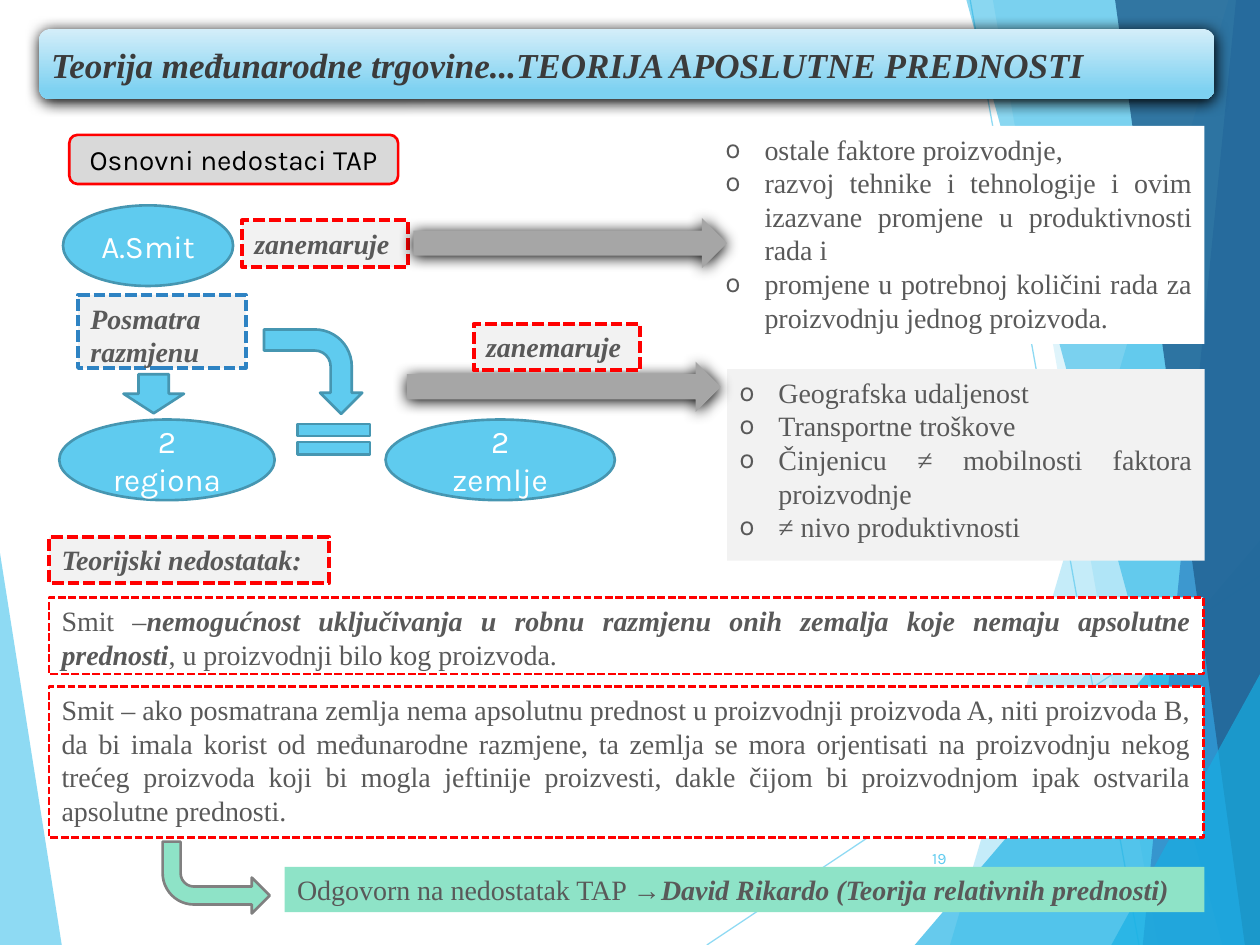
"""Builds the slide on the shortcomings of the theory of absolute advantage."""
from lxml import etree
from pptx import Presentation
from pptx.dml.color import RGBColor
from pptx.enum import dml, shapes, text
from pptx.oxml import ns
from pptx.util import Inches, Pt

G, A = shapes.MSO_SHAPE, text.PP_ALIGN
SERIF, SANS = "Times New Roman", "Karla"
GREY, PALE, RED, SKY, TEAL = "595959", "F2F2F2", "FF0000", "5FCBEF", "4696B1"
MINT, SILVER, WHITE = "8EE3C7", "A6A6A6", "FFFFFF"
LEFT, WIDE, RIGHT = 0.39, 9.16, 9.56

FACETS = [
    ([(0, 4.39), (0.49, 7.5), (0, 7.5)], SKY, 70),
    ([(9.75, 0), (7.54, 7.5), (10, 7.5), (10, 0)], SKY, 36),
    ([(7.88, 0), (9.19, 7.5), (10, 7.5), (10, 0)], SKY, 20),
    ([(7.26, 7.5), (10, 4.29), (10, 7.5)], "17B0E4", 66),
    ([(7.67, 0), (9.7, 7.5), (10, 7.5), (10, 0)], "17B0E4", 50),
    ([(9.81, 0), (9.07, 7.5), (10, 7.5), (10, 0)], "2E83C3", 70),
    ([(8.85, 0), (9.88, 7.5), (10, 7.5), (10, 0)], "226292", 82),
    ([(8.82, 7.5), (10, 5.35), (10, 7.5)], "17B0E4", 66),
]
RAYS = [(5.61, 7.5, 10, 4.57), (7.7, 0, 9.04, 7.5)]

TITLE = "Teorija međunarodne trgovine...TEORIJA APOSLUTNE PREDNOSTI"
IGNORED = [
    "ostale faktore proizvodnje,",
    "razvoj tehnike i tehnologije i ovim izazvane promjene u produktivnosti rada i",
    "promjene u potrebnoj količini rada za proizvodnju jednog proizvoda.",
]
COUNTRIES = [
    "Geografska udaljenost",
    "Transportne troškove",
    "Činjenicu ≠ mobilnosti faktora proizvodnje",
    "≠ nivo produktivnosti",
]
THIRD_PRODUCT = (
    "Smit – ako posmatrana zemlja nema apsolutnu prednost u proizvodnji proizvoda A, "
    "niti proizvoda B, da bi imala korist od međunarodne razmjene, ta zemlja se mora "
    "orjentisati na proizvodnju nekog trećeg proizvoda koji bi mogla jeftinije proizvesti, "
    "dakle čijom bi proizvodnjom ipak ostvarila apsolutne prednosti.")
EXCLUSION = [
    ("Smit –", False),
    ("nemogućnost uključivanja u robnu razmjenu onih zemalja koje nemaju apsolutne "
     "prednosti", True),
    (", u proizvodnji bilo kog proizvoda.", False),
]
ANSWER = [
    ("Odgovorn na nedostatak TAP →", False),
    ("David Rikardo (Teorija relativnih prednosti)", True),
]

prs = Presentation()
prs.slide_width, prs.slide_height = Inches(10), Inches(7.5)
s = prs.slides.add_slide(prs.slide_layouts[6])


def rgb(color):
    return RGBColor.from_string(color)


def sub(parent, tag, **attrs):
    return etree.SubElement(parent, ns.qn(tag), {k: str(v) for k, v in attrs.items()})


def fade(sp, percent):
    color = next(sp._element.spPr.iter(ns.qn("a:srgbClr")))
    sub(color, "a:alpha", val=percent * 1000)


def shape(kind, box, fill, line=None, width=1.5, dash=False, glow=False):
    sp = s.shapes.add_shape(kind, *map(Inches, box))
    sp.shadow.inherit = False
    sp.fill.solid()
    sp.fill.fore_color.rgb = rgb(fill)
    if line:
        sp.line.color.rgb = rgb(line)
        sp.line.width = Pt(width)
        if dash:
            sp.line.dash_style = dml.MSO_LINE.SQUARE_DOT
            sp.line._ln.find(ns.qn("a:prstDash")).set("val", "sysDash")
    else:
        sp.line.fill.background()
    if glow:
        effects = sp._element.spPr.find(ns.qn("a:effectLst"))
        shadow = sub(effects, "a:outerShdw", blurRad=Pt(8.5), dist=Pt(1), dir=5400000,
                     rotWithShape=0)
        sub(shadow, "a:srgbClr", val="000000")
    return sp


def write(sp, paras, size=16, font=SERIF, color=GREY, align=A.JUSTIFY, middle=False,
          bullet=False):
    tf = sp.text_frame
    tf.word_wrap = True
    tf.vertical_anchor = text.MSO_ANCHOR.MIDDLE if middle else text.MSO_ANCHOR.TOP
    for i, runs in enumerate(paras):
        p = tf.paragraphs[0] if i == 0 else tf.add_paragraph()
        p.alignment = align
        if bullet:
            pPr = p._p.get_or_add_pPr()
            pPr.set("marL", str(Inches(0.31)))
            pPr.set("indent", str(-Inches(0.31)))
            sub(pPr, "a:buFont", typeface=SANS)
            sub(pPr, "a:buChar", char="o")
        for words, strong in runs:
            r = p.add_run()
            r.text = words
            r.font.size, r.font.name = Pt(size), font
            r.font.color.rgb = rgb(color)
            r.font.bold = r.font.italic = strong


def label(words, box, line=RED):
    write(shape(G.RECTANGLE, box, PALE, line, 2.25, True), [[(words, True)]])


def oval(lines, box):
    write(shape(G.OVAL, box, SKY, TEAL), [[(t, False)] for t in lines],
          18, SANS, WHITE, A.CENTER, True)


def bullets(items, box, fill):
    write(shape(G.RECTANGLE, box, fill), [[(t, False)] for t in items], bullet=True)


def statement(runs, top, height):
    write(shape(G.RECTANGLE, (LEFT, top, WIDE, height), WHITE, RED, dash=True), [runs])


def facet(points, color, alpha):
    pts = [(Inches(x), Inches(y)) for x, y in points]
    fb = s.shapes.build_freeform(*pts[0])
    fb.add_line_segments(pts[1:], close=True)
    sp = fb.convert_to_shape()
    sp.shadow.inherit = False
    sp.fill.solid()
    sp.fill.fore_color.rgb = rgb(color)
    sp.line.fill.background()
    fade(sp, alpha)


def ray(ends):
    sp = s.shapes.add_connector(shapes.MSO_CONNECTOR.STRAIGHT, *map(Inches, ends))
    sp.line.color.rgb = rgb(SKY)
    sp.line.width = Pt(0.75)
    fade(sp, 70)
    sub(sp._element.spPr, "a:effectLst")


facet(*FACETS[0])
for ends in RAYS:
    ray(ends)
for polygon in FACETS[1:]:
    facet(*polygon)

number = s.shapes.add_textbox(*map(Inches, (7.05, 6.61, 0.56, 0.4)))
write(number, [[("19", False)]], 9, SANS, SKY, A.RIGHT, True)

title = shape(G.ROUNDED_RECTANGLE, (0.31, 0.23, 9.33, 0.56), SKY, glow=True)
title.fill.gradient()
title.fill.gradient_angle = 270
for stop, (color, place) in zip(title.fill.gradient_stops, [("D4EEF9", 0), ("7DD1F1", 0.88)]):
    stop.color.rgb, stop.position = rgb(color), place
write(title, [[(TITLE, True)]], 20, color="3B3B3B", align=A.LEFT, middle=True)
tf = title.text_frame
tf.margin_left = tf.margin_right = Inches(0.07)
tf.margin_top = tf.margin_bottom = Inches(0.04)

heading = shape(G.ROUNDED_RECTANGLE, (0.55, 1.07, 2.61, 0.39), "D9D9D9", RED)
write(heading, [[("Osnovni nedostaci TAP", False)]], 16, SANS, "000000", A.CENTER, True)

label("zanemaruje", (1.92, 1.75, 1.32, 0.37))
bullets(IGNORED, (5.66, 1, RIGHT - 5.66, 1.73), WHITE)
shape(G.RIGHT_ARROW, (3.28, 1.73, 2.49, 0.4), SILVER, glow=True)
bullets(COUNTRIES, (5.77, 2.93, RIGHT - 5.77, 1.52), PALE)
oval(["A.Smit"], (0.5, 1.63, 1.35, 0.64))
label("Posmatra razmjenu", (0.62, 2.34, 1.33, 0.58), "2E83C3")
oval(["2 regiona"], (0.47, 3.33, 1.71, 0.64))
oval(["2", "zemlje"], (3.06, 3.33, 1.82, 0.64))
shape(G.MATH_EQUAL, (2.26, 3.28, 0.78, 0.41), SKY, TEAL)
shape(G.BENT_ARROW, (2.15, 2.56, 0.67, 0.78), SKY, TEAL).rotation = 90
shape(G.DOWN_ARROW, (0.98, 2.97, 0.48, 0.31), SKY, TEAL)
shape(G.RIGHT_ARROW, (3.23, 2.87, 2.49, 0.4), SILVER, glow=True)
label("zanemaruje", (3.76, 2.57, 1.32, 0.37))

statement([(THIRD_PRODUCT, False)], 5.45, 1.2)
label("Teorijski nedostatak:", (LEFT, 4.26, 2.22, 0.37))
statement(EXCLUSION, 4.74, 0.61)

turn = shape(G.BENT_ARROW, (1.29, 6.68, 0.85, 0.57), MINT, "808080")
turn.rotation = 180
turn._element.spPr.find(ns.qn("a:xfrm")).set("flipH", "1")
write(shape(G.RECTANGLE, (2.26, 6.88, RIGHT - 2.26, 0.36), MINT), [ANSWER])

prs.save("out.pptx")
